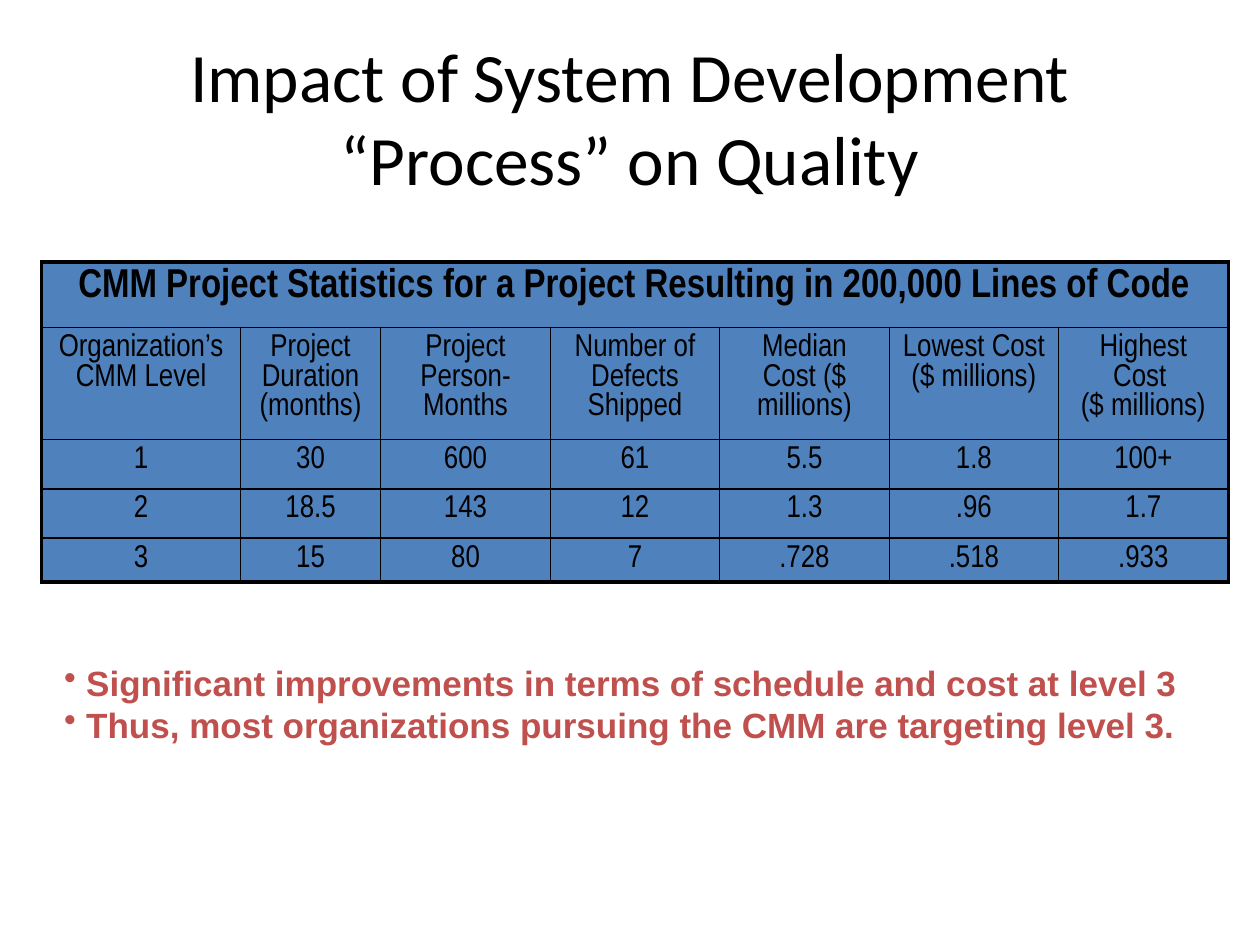
from lxml.etree import SubElement
from pptx import Presentation
from pptx.dml.color import RGBColor
from pptx.enum.text import MSO_ANCHOR as Anchor, MSO_AUTO_SIZE as AutoSize, PP_ALIGN as Align
from pptx.oxml.ns import qn
from pptx.util import Inches, Pt

BLACK, BLUE, RED = "000000", "4F81BD", "C0504D"
TITLE = "Impact of System Development “Process” on Quality"
TABLE_TITLE = "CMM Project Statistics for a Project Resulting in 200,000 Lines of Code"
ROWS = [
    [TABLE_TITLE] + [""] * 6,
    ["Organization’s CMM Level", "Project Duration (months)", "Project Person-Months",
     "Number of Defects Shipped", "Median Cost ($ millions)", "Lowest Cost ($ millions)",
     "Highest Cost \v($ millions)"],
    ["1", "30", "600", "61", "5.5", "1.8", "100+"],
    ["2", "18.5", "143", "12", "1.3", ".96", "1.7"],
    ["3", "15", "80", "7", ".728", ".518", ".933"],
]
COLUMN_WIDTHS = [1.58, 1.11, 1.35, 1.34, 1.35, 1.34, 1.35]
ROW_HEIGHTS = [0.52, 0.89, 0.39, 0.39, 0.35]
CONCLUSIONS = [
    " Significant improvements in terms of schedule and cost at level 3",
    " Thus, most organizations pursuing the CMM are targeting level 3.",
]


def rgb(value):
    return RGBColor.from_string(value)


def write(paragraph, text, font="Arial", size=18, color=BLACK, bold=False, align=Align.LEFT):
    paragraph.text = text
    paragraph.alignment = align
    for run in paragraph.runs:
        run.font.name = font
        run.font.size = Pt(size)
        run.font.bold = bold
        run.font.color.rgb = rgb(color)


def add_bullet(paragraph, character="•"):
    properties = paragraph._p.get_or_add_pPr()
    properties.set("marL", "0")
    properties.set("indent", "0")
    SubElement(properties, qn("a:buFontTx"))
    SubElement(properties, qn("a:buChar"), char=character)


def set_borders(cell, widths):
    """Draw the sides named in widths (L, R, T, B), given in points."""
    properties = cell._tc.get_or_add_tcPr()
    for side, width in widths.items():
        line = SubElement(properties, qn(f"a:ln{side}"), w=str(Pt(width)))
        fill = SubElement(line, qn("a:solidFill"))
        SubElement(fill, qn("a:srgbClr"), val=BLACK)


def place_title(slide, left, top, width, height):
    title = slide.shapes.title
    title.left, title.top, title.width, title.height = map(Inches, (left, top, width, height))
    frame = title.text_frame
    frame.word_wrap = True
    frame.auto_size = AutoSize.NONE
    frame.vertical_anchor = Anchor.MIDDLE
    write(frame.paragraphs[0], TITLE, font="Calibri", size=39.6, align=Align.CENTER)


def add_statistics(slide, left, top):
    last_row, last_column = len(ROWS) - 1, len(COLUMN_WIDTHS) - 1
    table = slide.shapes.add_table(
        len(ROWS), len(COLUMN_WIDTHS), Inches(left), Inches(top),
        Inches(sum(COLUMN_WIDTHS)), Inches(sum(ROW_HEIGHTS))).table
    table.first_row = table.horz_banding = False
    for column, width in zip(table.columns, COLUMN_WIDTHS):
        column.width = Inches(width)
    for row, height in zip(table.rows, ROW_HEIGHTS):
        row.height = Inches(height)
    table.cell(0, 0).merge(table.cell(0, last_column))

    for r, texts in enumerate(ROWS):
        for c, text in enumerate(texts):
            cell = table.cell(r, c)
            outer = {"L": c == 0, "R": c == last_column or r == 0,
                     "T": r == 0, "B": r == last_row}
            set_borders(cell, {side: 2.25 if edge else 1 for side, edge in outer.items()})
            cell.fill.solid()
            cell.fill.fore_color.rgb = rgb(BLUE)
            write(cell.text_frame.paragraphs[0], text, font="Arial Narrow",
                  size=23 if r == 0 else 18, bold=r == 0, align=Align.CENTER)


def add_conclusions(slide, left, top, width, height):
    box = slide.shapes.add_textbox(*map(Inches, (left, top, width, height)))
    frame = box.text_frame
    frame.word_wrap = True
    frame.auto_size = AutoSize.SHAPE_TO_FIT_TEXT
    for index, text in enumerate(CONCLUSIONS):
        paragraph = frame.add_paragraph() if index else frame.paragraphs[0]
        write(paragraph, text, size=20, color=RED, bold=True)
        add_bullet(paragraph)


def main():
    presentation = Presentation()
    presentation.slide_width, presentation.slide_height = Inches(10), Inches(7.5)
    slide = presentation.slides.add_slide(presentation.slide_layouts[5])
    place_title(slide, 0.5, 0.3, 9, 1.25)
    add_statistics(slide, 0.33, 2.08)
    add_conclusions(slide, 0.41, 5.2, 9.08, 0.77)
    presentation.save("out.pptx")


if __name__ == "__main__":
    main()
